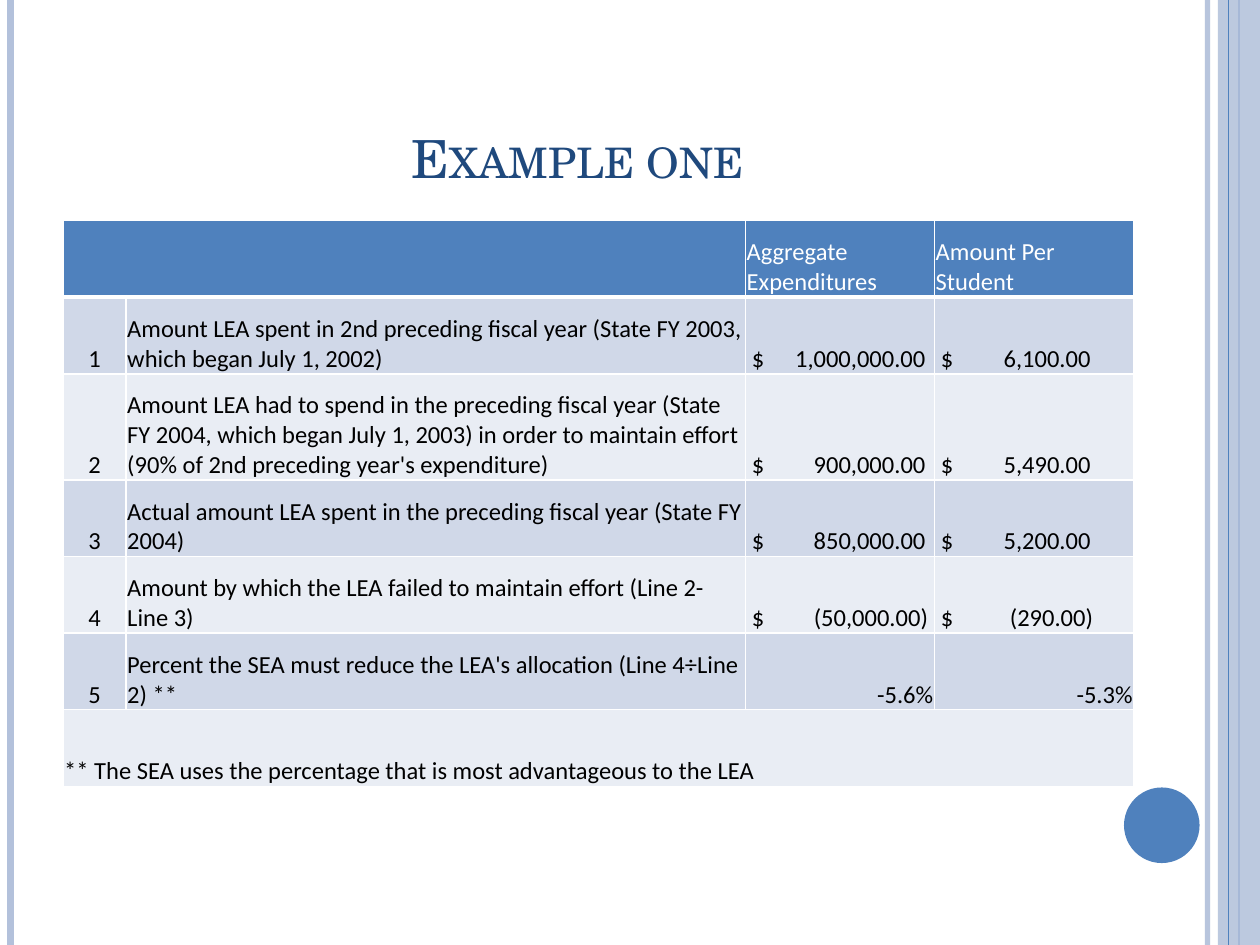
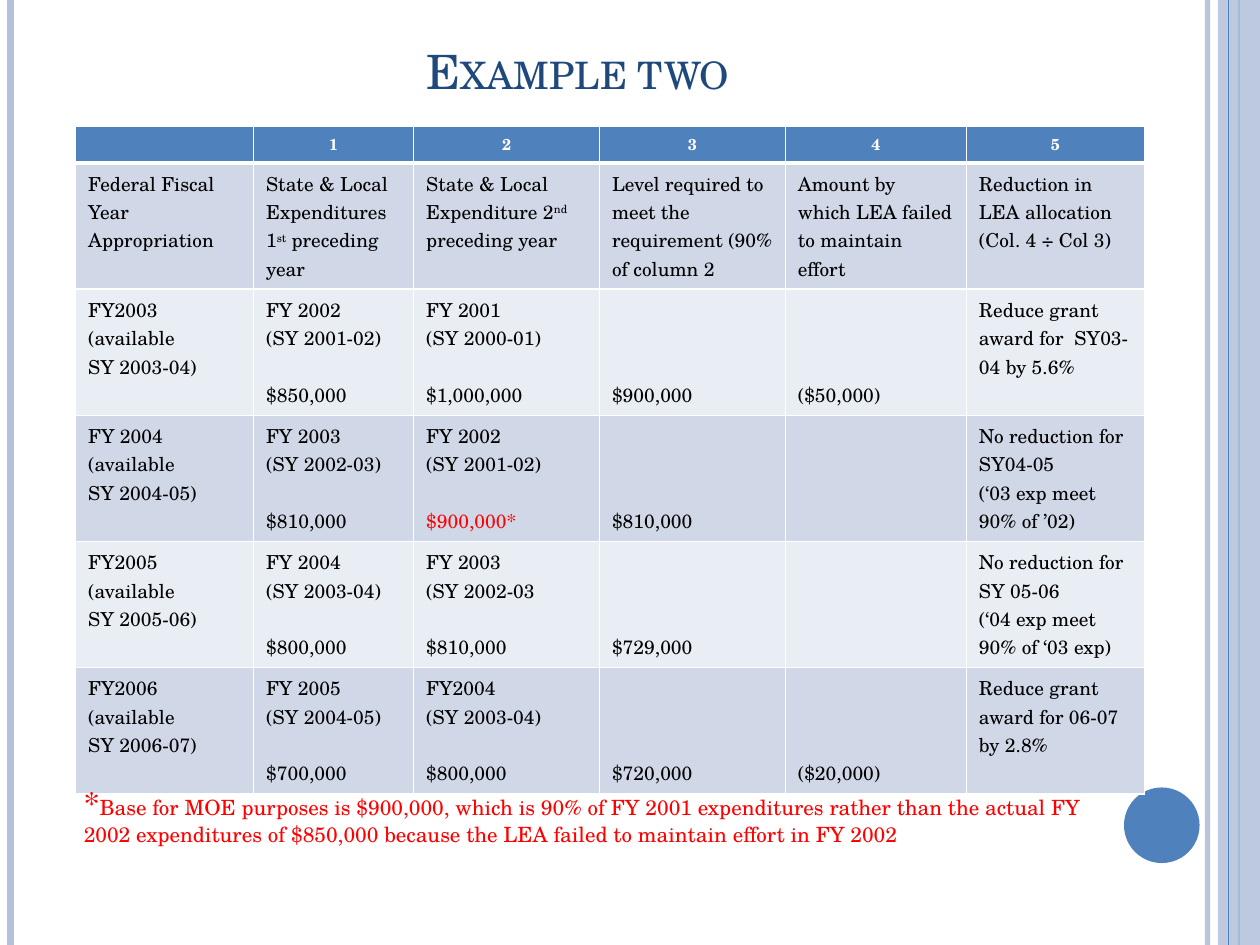
from lxml.etree import SubElement
from pptx import Presentation
from pptx.dml.color import RGBColor
from pptx.enum.shapes import MSO_CONNECTOR, MSO_SHAPE
from pptx.enum.text import MSO_ANCHOR as Anchor, MSO_AUTO_SIZE as AutoSize, PP_ALIGN as Align
from pptx.oxml.ns import qn
from pptx.util import Inches, Pt

COLORS = {
    "page": "FFFFFF", "accent": "4F81BD", "pale": "B3C1DB", "title": "1F497D",
    "odd row": "D0D8E8", "even row": "E9EDF4", "ink": "000000", "alert": "FF0000",
}
SERIF, SANS = "TeX Gyre Schola", "Calibri"
COLUMNS, ROWS = 120, 90  # grid of the 10 by 7.5 inch slide
TITLE_ONLY = 5


def rgb(name):
    return RGBColor.from_string(COLORS[name])


def set_alpha(fill_parent, percent):
    color = next(fill_parent.iter(qn("a:srgbClr")))
    SubElement(color, qn("a:alpha")).set("val", str(percent * 1000))


def split_raised(line):
    """Turn 'a^b^c' into runs, with b raised."""
    return [(part, {"baseline": 30000} if i % 2 else {})
            for i, part in enumerate(line.split("^")) if part]


def write(frame, lines, align=Align.LEFT, last_gap=0, tab=None, **font):
    """Fill a text frame; each line is a string or a list of (text, font changes)."""
    for i, line in enumerate(lines):
        paragraph = frame.paragraphs[0] if i == 0 else frame.add_paragraph()
        paragraph.alignment = align
        if last_gap and i == len(lines) - 1:
            paragraph.space_before = Pt(last_gap)
        if tab:
            stops = SubElement(paragraph._p.get_or_add_pPr(), qn("a:tabLst"))
            SubElement(stops, qn("a:tab"), pos=str(Inches(tab)), algn="r")
        for text, changes in split_raised(line) if isinstance(line, str) else line:
            look = {"size": 12, "face": SERIF, "color": "ink", "bold": False, **font, **changes}
            run = paragraph.add_run()
            run.text = text
            run.font.size, run.font.name = Pt(look["size"]), look["face"]
            run.font.bold, run.font.color.rgb = look["bold"], rgb(look["color"])
            for attribute in ("cap", "baseline"):
                if attribute in look:
                    run.font._element.set(attribute, str(look[attribute]))


def shrink_empty(cell, size):
    """Keep an empty cell from stretching its row."""
    SubElement(cell.text_frame.paragraphs[0]._p, qn("a:endParaRPr"), sz=str(size * 100))


class Deck:
    """Holds the presentation, the grid and the slide being filled."""

    def __init__(self):
        self.prs = Presentation()
        self.prs.slide_width, self.prs.slide_height = Inches(10), Inches(7.5)
        self.layout = self.prs.slide_layouts[TITLE_ONLY]
        self.slide = None

    def x(self, columns):
        return round(self.prs.slide_width * columns / COLUMNS)

    def y(self, rows):
        return round(self.prs.slide_height * rows / ROWS)

    def box(self, left, top, width, height):
        return self.x(left), self.y(top), self.x(width), self.y(height)

    def new_slide(self, title, height, size):
        self.slide = self.prs.slides.add_slide(self.layout)
        if len(self.prs.slides) == 1:
            self.decorate_layout()
        heading = self.slide.shapes.title
        heading.left, heading.top, heading.width, heading.height = self.box(6, 3.6, 98, height)
        heading.text_frame.auto_size = AutoSize.NONE
        heading.text_frame.vertical_anchor = Anchor.BOTTOM
        write(heading.text_frame, [title], Align.CENTER, size=size, color="title", cap="small")

    def decorate_layout(self):
        """Draw the side bands and the disc, then hand them to the shared layout."""
        parts = [
            self.rule(115, "pale", 3, alpha=93),
            self.rule(1, "pale", 4.5),
            self.rule(118, "accent", 1.5),
            self.shape(MSO_SHAPE.RECTANGLE, (116, 0, 4, ROWS), "pale", alpha=87),
            self.rule(117, "accent", 0.75),
            self.shape(MSO_SHAPE.OVAL, (107.05, 75, 7.2, 7.2), "accent"),
        ]
        for part in parts:
            self.layout.shapes.element.append(part.element)

    def rule(self, column, color, width, alpha=None):
        x = self.x(column)
        line = self.slide.shapes.add_connector(MSO_CONNECTOR.STRAIGHT, x, 0, x, self.y(ROWS))
        line.line.color.rgb, line.line.width = rgb(color), Pt(width)
        if alpha:
            set_alpha(line.element.spPr, alpha)
        SubElement(line.element.spPr, qn("a:effectLst"))
        return line

    def shape(self, kind, place, color, alpha=None):
        shape = self.slide.shapes.add_shape(kind, *self.box(*place))
        shape.shadow.inherit = False
        shape.fill.solid()
        shape.fill.fore_color.rgb = rgb(color)
        shape.line.fill.background()
        if alpha:
            set_alpha(shape.element.spPr, alpha)
        return shape

    def note(self, place, line, **font):
        frame = self.slide.shapes.add_textbox(*self.box(*place)).text_frame
        frame.word_wrap = True
        write(frame, [line], **font)

    def table(self, left, top, widths, heights):
        """Add an empty table with a header row, banded rows and white borders."""
        place = self.box(left, top, sum(widths), sum(heights))
        table = self.slide.shapes.add_table(len(heights), len(widths), *place).table
        table.first_row = table.horz_banding = False
        for column, width in zip(table.columns, widths):
            column.width = self.x(width)
        for r, (row, height) in enumerate(zip(table.rows, heights)):
            row.height = self.y(height)
            band = "accent" if r == 0 else "odd row" if r % 2 else "even row"
            for cell in row.cells:
                self.border(cell, top=3 if r == 1 else 1, bottom=3 if r == 0 else 1)
                cell.fill.solid()
                cell.fill.fore_color.rgb = rgb(band)
        return table

    def border(self, cell, top, bottom):
        properties = cell._tc.get_or_add_tcPr()
        for side, width in zip("LRTB", (1, 1, top, bottom)):
            edge = SubElement(properties, qn(f"a:ln{side}"), w=str(Pt(width)))
            SubElement(SubElement(edge, qn("a:solidFill")), qn("a:srgbClr"), val=COLORS["page"])


EFFORT = [
    ("", "", "Aggregate Expenditures", "Amount Per Student"),
    ("1", "Amount LEA spent in 2nd preceding fiscal year (State FY 2003, which began July 1, 2002)",
     "$\t1,000,000.00", "$\t6,100.00"),
    ("2", "Amount LEA had to spend in the preceding fiscal year (State FY 2004, which began "
     "July 1, 2003) in order to maintain effort (90% of 2nd preceding year's expenditure)",
     "$\t900,000.00", "$\t5,490.00"),
    ("3", "Actual amount LEA spent in the preceding fiscal year (State FY 2004)",
     "$\t850,000.00", "$\t5,200.00"),
    ("4", "Amount by which the LEA failed to maintain effort (Line 2-Line 3)",
     "$\t(50,000.00)", "$\t(290.00)"),
    ("5", "Percent the SEA must reduce the LEA's allocation (Line 4÷Line 2) **", "-5.6%", "-5.3%"),
    ("** The SEA uses the percentage that is most advantageous to the LEA", "", "", ""),
]
AMOUNT_TABS = {2: 1.38, 3: 1.19}
BRACKET_OVERHANG = 0.02

HISTORY = [
    ("", "1", "2", "3", "4", "5"),
    ("Federal Fiscal Year Appropriation", "State & Local Expenditures 1^st^ preceding year",
     "State & Local Expenditure 2^nd^ preceding year",
     "Level required to meet the requirement (90% of column 2",
     "Amount by which LEA failed to maintain effort",
     "Reduction in LEA allocation\n(Col. 4 ÷ Col 3)"),
    ("FY2003\n(available\nSY 2003-04)", "FY 2002\n(SY 2001-02)\n$850,000",
     "FY 2001\n(SY 2000-01)\n$1,000,000", "$900,000", "($50,000)",
     "Reduce grant award for  SY03-04 by 5.6%"),
    ("FY 2004\n(available\nSY 2004-05)", "FY 2003\n(SY 2002-03)\n$810,000",
     "FY 2002\n(SY 2001-02)\n$900,000*", "$810,000", "",
     "No reduction for\nSY04-05\n(‘03 exp meet 90% of ’02)"),
    ("FY2005\n(available\nSY 2005-06)", "FY 2004\n(SY 2003-04)\n$800,000",
     "FY 2003\n(SY 2002-03\n$810,000", "$729,000", "",
     "No reduction for SY 05-06\n(‘04 exp meet 90% of ‘03 exp)"),
    ("FY2006\n(available\nSY 2006-07)", "FY 2005\n(SY 2004-05)\n$700,000",
     "FY2004\n(SY 2003-04)\n$800,000", "$720,000", "($20,000)",
     "Reduce grant award for 06-07 by 2.8%"),
]
LINE_HEIGHT = 16.2  # points, for 11 point text


def example_one(deck):
    deck.new_slide("Example one", height=15, size=30)
    table = deck.table(6, 21, [6, 59, 18, 19], [7.3, 7.3, 10.1, 7.3, 7.3, 7.3, 7.3])
    table.cell(0, 0).merge(table.cell(0, 1))
    table.cell(6, 0).merge(table.cell(6, 3))
    for r, entries in enumerate(EFFORT):
        for c, entry in enumerate(entries):
            cell = table.cell(r, c)
            is_amount = entry.startswith("$")
            cell.vertical_anchor = Anchor.BOTTOM
            cell.margin_left = Inches(0.05 if is_amount else 0.01)
            cell.margin_top = cell.margin_right = Inches(0.01)
            cell.margin_bottom = 0
            if not entry:
                continue
            align = (Align.RIGHT if entry.endswith("%") else
                     Align.CENTER if entry.isdigit() else Align.LEFT)
            tab = AMOUNT_TABS[c] + BRACKET_OVERHANG * entry.endswith(")") if is_amount else None
            write(cell.text_frame, [entry], align, tab=tab,
                  size=14, face=SANS, color="ink" if r else "page")


def example_two(deck):
    deck.new_slide("Example two", height=6.4, size=27)
    table = deck.table(7.2, 12, [16.95, 15.25, 17.7, 17.7, 17.25, 16.95], [3.5] + [11.8] * 5)
    for r, entries in enumerate(HISTORY):
        for c, entry in enumerate(entries):
            cell = table.cell(r, c)
            if not entry:
                shrink_empty(cell, 9)
                continue
            if r == 0:
                write(cell.text_frame, [entry], Align.CENTER, size=9, bold=True, color="page")
                continue
            if r > 1 and c in (3, 4):
                cell.vertical_anchor = Anchor.BOTTOM
            lines = entry.split("\n")
            if entry.endswith("*"):
                lines[-1] = [(lines[-1], {"color": "alert"})]
            gap = LINE_HEIGHT if r > 1 and c in (1, 2) else 0
            write(cell.text_frame, lines, last_gap=gap, size=11)
    deck.note((6.8, 74.05, 100, 7.3), [
        ("*", {"size": 18}),
        ("Base for MOE purposes is $900,000, which is 90% of FY 2001 expenditures rather than the "
         "actual FY 2002 expenditures of $850,000 because the LEA failed to maintain effort in "
         "FY 2002", {}),
    ], color="alert")


def main():
    deck = Deck()
    example_one(deck)
    example_two(deck)
    deck.prs.save("out.pptx")


if __name__ == "__main__":
    main()
